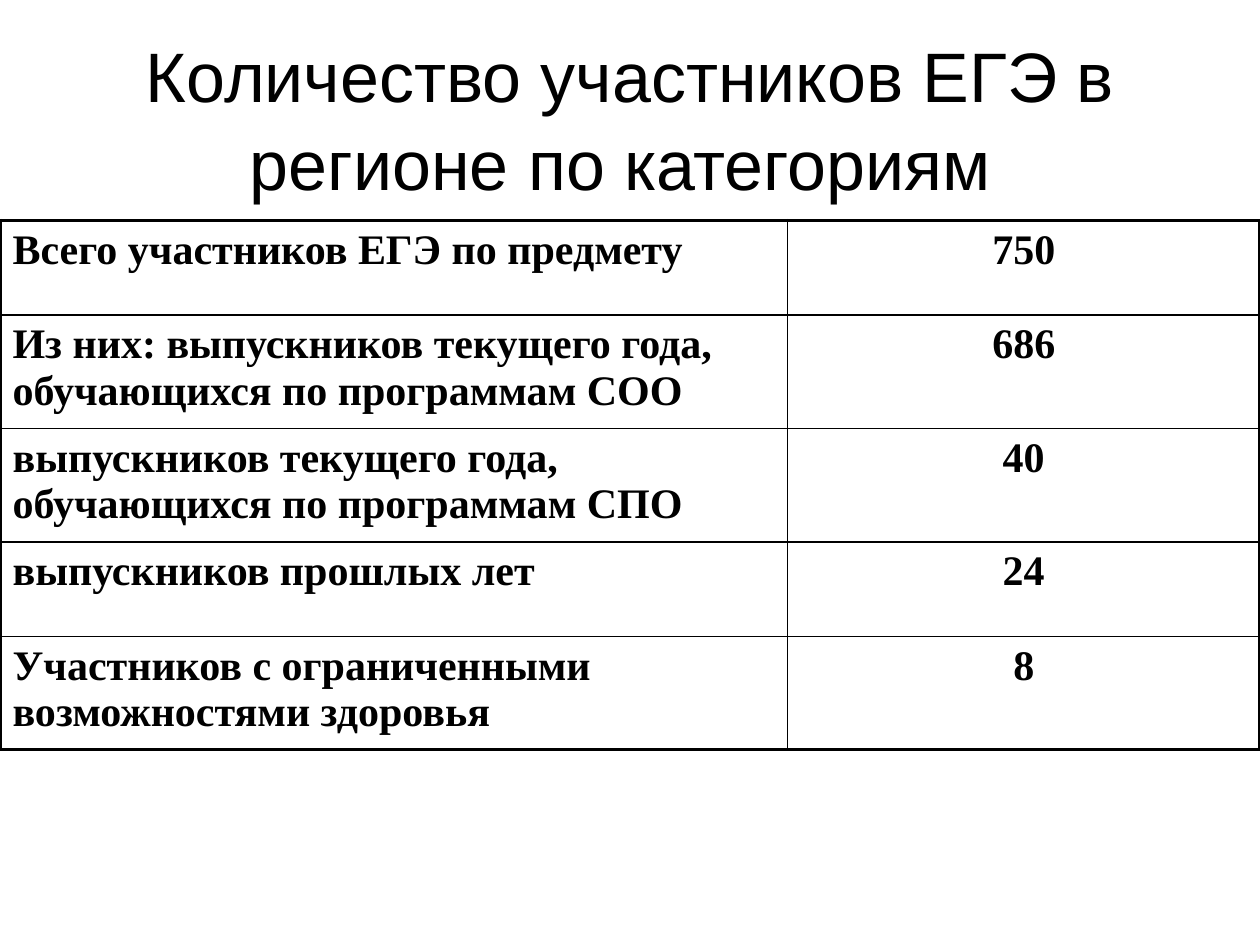
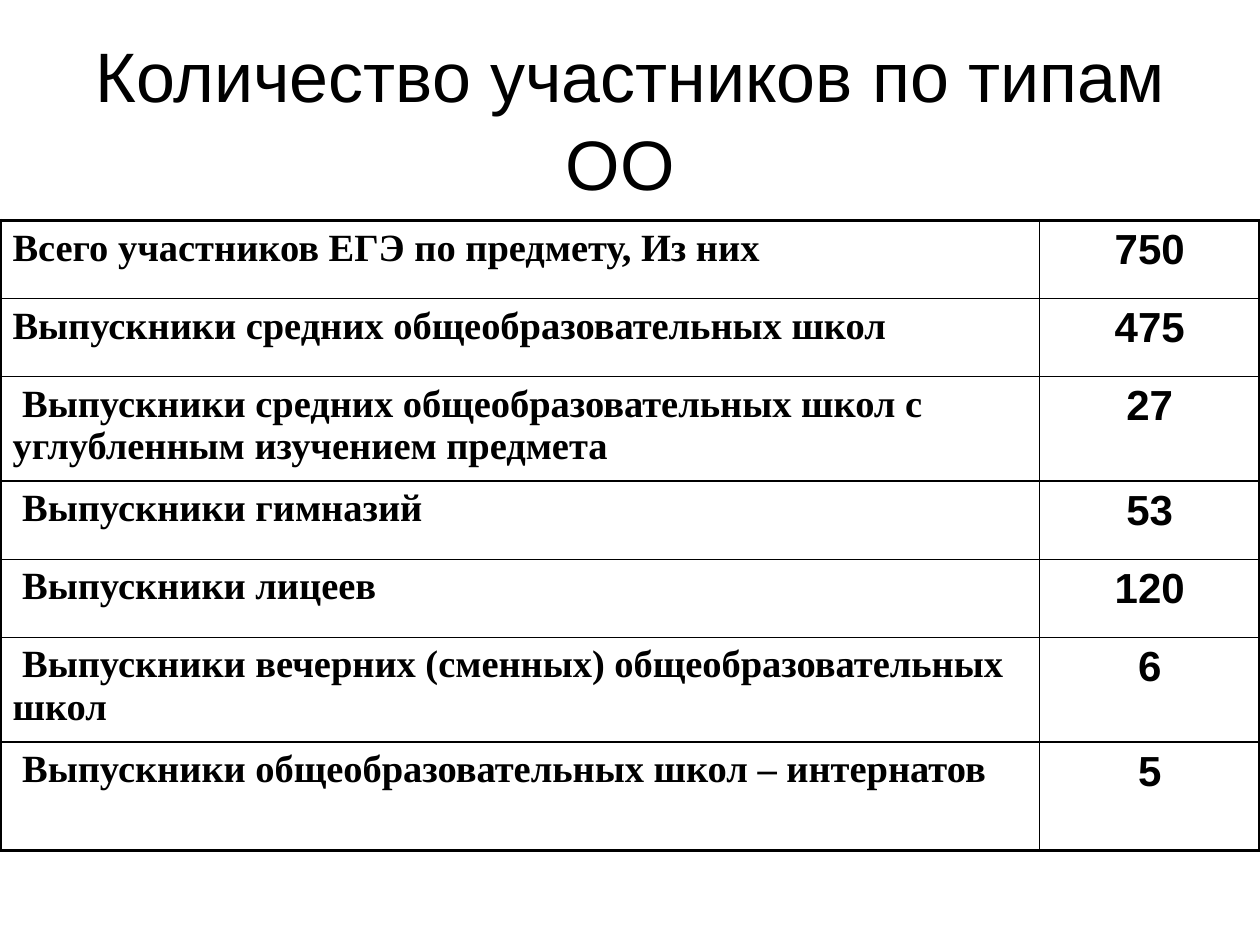
from lxml import etree
from pptx import Presentation
from pptx.dml.color import RGBColor
from pptx.enum.text import MSO_ANCHOR, MSO_AUTO_SIZE, PP_ALIGN
from pptx.oxml.ns import qn
from pptx.util import Inches, Pt

LEFT, CENTER = PP_ALIGN.LEFT, PP_ALIGN.CENTER
MIDDLE, NO_AUTOFIT = MSO_ANCHOR.MIDDLE, MSO_AUTO_SIZE.NONE

COLORS = {"ink": "000000"}
SANS, SERIF = "Arial", "Times New Roman"
TITLE_SIZE = 40
TITLE_BOX = (0.5, 0.3, 9, 1.25)
TABLE_TOP = 1.75
THIN, THICK = 1, 2.25

# Each row: label, value, height in inches; each column: width, font, size, alignment
SLIDES = [
    {
        "title": "Количество участников ЕГЭ в регионе по категориям ",
        "columns": [(6.25, SERIF, 24, LEFT), (3.75, SERIF, 24, CENTER)],
        "rows": [
            ("Всего участников ЕГЭ по предмету", "750", 0.75),
            ("Из них: выпускников текущего года, обучающихся по программам СОО", "686", 0.9),
            ("выпускников текущего года, обучающихся по программам СПО", "40", 0.9),
            ("выпускников прошлых лет", "24", 0.75),
            ("Участников с ограниченными возможностями здоровья", "8", 0.9),
        ],
    },
    {
        "title": "Количество участников по типам ОО ",
        "columns": [(8.25, SERIF, 22, LEFT), (1.75, SANS, 24, CENTER)],
        "rows": [
            ("Всего участников ЕГЭ по предмету, Из них", "750", 0.62),
            ("Выпускники средних общеобразовательных школ", "475", 0.62),
            (" Выпускники средних общеобразовательных школ с углубленным изучением предмета",
             "27", 0.83),
            (" Выпускники гимназий", "53", 0.62),
            (" Выпускники лицеев", "120", 0.62),
            (" Выпускники вечерних (сменных) общеобразовательных школ", "6", 0.83),
            (" Выпускники общеобразовательных школ – интернатов", "5", 0.86),
        ],
    },
]


def write(text_frame, text, font_name, size, bold, alignment):
    text_frame.text = text
    paragraph = text_frame.paragraphs[0]
    paragraph.alignment = alignment
    font = paragraph.runs[0].font
    font.name, font.size, font.bold = font_name, Pt(size), bold
    font.color.rgb = RGBColor.from_string(COLORS["ink"])


def add_border(cell, side, width):
    properties = cell._tc.get_or_add_tcPr()
    line = etree.SubElement(properties, qn(f"a:ln{side}"), w=str(Pt(width)))
    fill = etree.SubElement(line, qn("a:solidFill"))
    etree.SubElement(fill, qn("a:srgbClr"), val=COLORS["ink"])


presentation = Presentation()
presentation.slide_width, presentation.slide_height = Inches(10), Inches(7.5)
title_only = presentation.slide_layouts[5]

for content in SLIDES:
    slide = presentation.slides.add_slide(title_only)
    columns, rows = content["columns"], content["rows"]

    # Title
    title = slide.shapes.title
    title.left, title.top, title.width, title.height = map(Inches, TITLE_BOX)
    title.text_frame.vertical_anchor = MIDDLE
    title.text_frame.auto_size = NO_AUTOFIT
    write(title.text_frame, content["title"], SANS, TITLE_SIZE, False, CENTER)
    title.text_frame.paragraphs[0].line_spacing = 1.05

    # Table grid
    table_height = sum(height for _, _, height in rows)
    table = slide.shapes.add_table(
        len(rows), len(columns), 0, Inches(TABLE_TOP),
        presentation.slide_width, Inches(table_height)).table
    table.first_row = table.horz_banding = False
    for column, (width, *_) in zip(table.columns, columns):
        column.width = Inches(width)

    # Cells: thick outer frame, thin inner lines
    for row_index, (label, value, height) in enumerate(rows):
        table.rows[row_index].height = Inches(height)
        for column_index, text in enumerate((label, value)):
            _, font_name, size, alignment = columns[column_index]
            cell = table.cell(row_index, column_index)
            write(cell.text_frame, text, font_name, size, True, alignment)
            outer_sides = {
                "L": column_index == 0,
                "R": column_index == len(columns) - 1,
                "T": row_index == 0,
                "B": row_index == len(rows) - 1,
            }
            for side, is_outer in outer_sides.items():
                add_border(cell, side, THICK if is_outer else THIN)
            cell.fill.background()

presentation.save("out.pptx")
